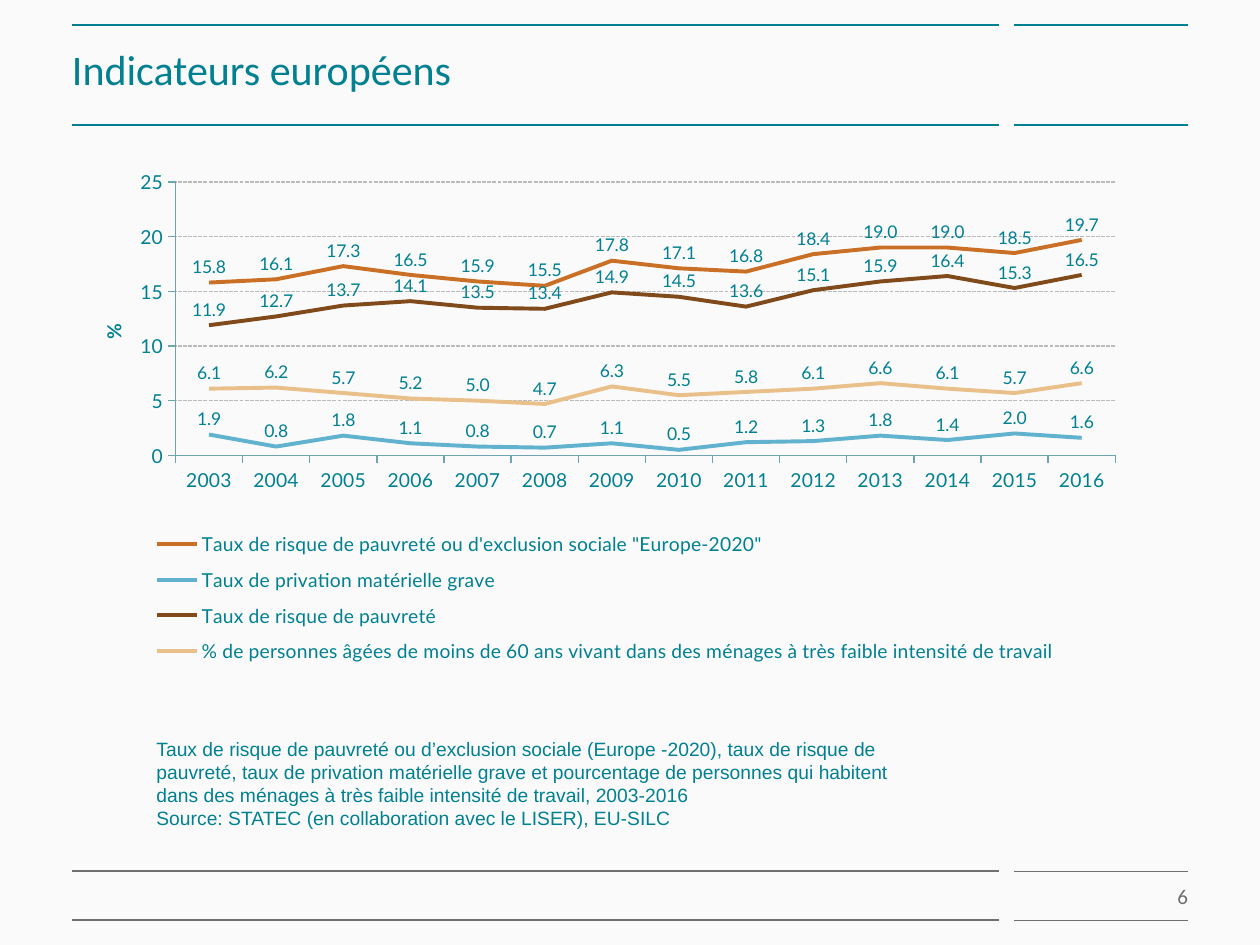
import dataclasses
import typing

import pptx
import pptx.chart.data
import pptx.dml.color
import pptx.enum.chart
import pptx.enum.dml
import pptx.enum.text
import pptx.oxml
import pptx.oxml.ns
import pptx.util

EMU_PER_PX = 914400 / 126


@dataclasses.dataclass(frozen=True)
class Theme:
    background: str = "FAFAFA"
    teal: str = "008091"
    grey: str = "6F6F6F"
    grid: str = "BBBBBB"
    axis: str = "6FA3AE"
    title_size: int = 24
    number_size: int = 12
    body_size: int = 11
    label_size: int = 10
    title_font: str = "Calibri"
    chart_font: str = "Lato"
    note_font: str = "Arial"


THEME = Theme()


class Box(typing.NamedTuple):
    left: int
    top: int
    width: int
    height: int


class Rule(typing.NamedTuple):
    top: int
    color: str
    wide_weight: float
    narrow_weight: float


class Series(typing.NamedTuple):
    name: str
    color: str
    values: tuple[float, ...]


class TextStyle(typing.NamedTuple):
    font: str
    size: int
    color: str


RULES = (
    Rule(25, THEME.teal, 1.5, 0.75),
    Rule(125, THEME.teal, 1.5, 0.75),
    Rule(871, THEME.grey, 0.75, 0.25),
    Rule(920, THEME.grey, 0.75, 0.25),
)
WIDE_SPAN = (999, 72)
NARROW_SPAN = (1188, 1014)

YEARS = [str(year) for year in range(2003, 2017)]
SERIES = (
    Series('Taux de risque de pauvreté ou d\'exclusion sociale "Europe-2020"', "CA7026",
           (15.8, 16.1, 17.3, 16.5, 15.9, 15.5, 17.8, 17.1, 16.8, 18.4, 19, 19, 18.5, 19.7)),
    Series("Taux de privation matérielle grave", "60B2CE",
           (1.9, 0.8, 1.8, 1.1, 0.8, 0.7, 1.1, 0.5, 1.2, 1.3, 1.8, 1.4, 2, 1.6)),
    Series("Taux de risque de pauvreté", "804A1A",
           (11.9, 12.7, 13.7, 14.1, 13.5, 13.4, 14.9, 14.5, 13.6, 15.1, 15.9, 16.4, 15.3, 16.5)),
    Series("% de personnes âgées de moins de 60 ans vivant dans des ménages "
           "à très faible intensité de travail", "EAC08A",
           (6.1, 6.2, 5.7, 5.2, 5, 4.7, 6.3, 5.5, 5.8, 6.1, 6.6, 6.1, 5.7, 6.6)),
)
NOTE = (
    "Taux de risque de pauvreté ou d’exclusion sociale (Europe -2020), taux de risque de "
    "pauvreté, taux de privation matérielle grave et pourcentage de personnes qui habitent "
    "dans des ménages à très faible intensité de travail, 2003-2016",
    "Source: STATEC (en collaboration avec le LISER), EU-SILC",
)


def px(length: int) -> pptx.util.Emu:
    return pptx.util.Emu(round(length * EMU_PER_PX))


def rgb(color: str) -> pptx.dml.color.RGBColor:
    return pptx.dml.color.RGBColor.from_string(color)


def set_all(target: typing.Any, values: dict[str, typing.Any]) -> None:
    for name, value in values.items():
        setattr(target, name, value)


def style_font(font, style: TextStyle) -> None:
    set_all(font, {"name": style.font, "size": pptx.util.Pt(style.size)})
    font.color.rgb = rgb(style.color)


def style_line(line, color: str, weight: float) -> None:
    line.color.rgb = rgb(color)
    line.width = pptx.util.Pt(weight)


def draw_line(slide, span: tuple[int, int], top: int, color: str, weight: float) -> None:
    start, end = span
    connector = slide.shapes.add_connector(
        pptx.enum.shapes.MSO_CONNECTOR.STRAIGHT, px(start), px(top), px(end), px(top))
    style_line(connector.line, color, weight)
    properties = connector._element.spPr
    properties.append(pptx.oxml.parse_xml(
        f'<a:effectLst {pptx.oxml.ns.nsdecls("a")}/>'))


def draw_text(slide, box: Box, texts: tuple[str, ...], style: TextStyle,
              frame_format: dict[str, typing.Any],
              alignment=pptx.enum.text.PP_ALIGN.LEFT) -> None:
    shape = slide.shapes.add_textbox(*map(px, box))
    frame = shape.text_frame
    set_all(frame, {"word_wrap": True, **frame_format})
    for index, text in enumerate(texts):
        paragraph = frame.paragraphs[0] if index == 0 else frame.add_paragraph()
        paragraph.alignment = alignment
        run = paragraph.add_run()
        run.text = text
        style_font(run.font, style)


def place(element, index: int, fractions: dict[str, float], inner: bool = False) -> None:
    """Give a chart part a manual layout, in fractions of the chart."""
    for old in element.findall(pptx.oxml.ns.qn("c:layout")):
        element.remove(old)
    target = '<c:layoutTarget val="inner"/>' if inner else ""
    modes = "".join(f'<c:{key}Mode val="edge"/>' for key in "xy")
    numbers = "".join(f'<c:{key} val="{value}"/>' for key, value in fractions.items())
    element.insert(index, pptx.oxml.parse_xml(
        f'<c:layout {pptx.oxml.ns.nsdecls("c")}><c:manualLayout>'
        f"{target}{modes}{numbers}</c:manualLayout></c:layout>"))


def draw_chart(slide, box: Box) -> None:
    enums = pptx.enum.chart
    data = pptx.chart.data.CategoryChartData(number_format="#,##0.0")
    data.categories = YEARS
    for item in SERIES:
        data.add_series(item.name, item.values)
    chart = slide.shapes.add_chart(enums.XL_CHART_TYPE.LINE, *map(px, box), data).chart
    body = TextStyle(THEME.chart_font, THEME.body_size, THEME.teal)
    set_all(chart, {"has_title": False, "has_legend": True})
    style_font(chart.font, body)

    # Axes
    for axis in (chart.category_axis, chart.value_axis):
        axis.major_tick_mark = enums.XL_TICK_MARK.OUTSIDE
        style_line(axis.format.line, THEME.axis, 0.75)
        style_font(axis.tick_labels.font, body)
    value_axis = chart.value_axis
    set_all(value_axis, {"minimum_scale": 0, "maximum_scale": 25, "major_unit": 5,
                         "has_major_gridlines": True, "has_title": True})
    set_all(value_axis.tick_labels, {"number_format": "#,##0",
                                     "number_format_is_linked": False})
    grid_line = value_axis.major_gridlines.format.line
    style_line(grid_line, THEME.grid, 0.75)
    grid_line.dash_style = pptx.enum.dml.MSO_LINE.SQUARE_DOT
    title_frame = value_axis.axis_title.text_frame
    title_frame.text = "%"
    title_font = title_frame.paragraphs[0].runs[0].font
    style_font(title_font, body)
    title_font.bold = True

    # Series and their labels
    plot = chart.plots[0]
    plot.vary_by_categories = False
    for series, item in zip(plot.series, SERIES):
        series.smooth = False
        style_line(series.format.line, item.color, 2.25)
        series.marker.style = enums.XL_MARKER_STYLE.NONE
        labels = series.data_labels
        set_all(labels, {"show_value": True, "number_format": "#,##0.0",
                         "number_format_is_linked": False,
                         "position": enums.XL_LABEL_POSITION.ABOVE})
        style_font(labels.font, body._replace(size=THEME.label_size))

    # Legend and placement
    legend = chart.legend
    set_all(legend, {"position": enums.XL_LEGEND_POSITION.BOTTOM,
                     "include_in_layout": False})
    style_font(legend.font, body)
    place(plot._element.getparent(), 0,
          {"x": 0.105, "y": 0.033, "w": 0.885, "h": 0.531}, inner=True)
    place(legend._element, 1, {"x": 0.07, "y": 0.69, "w": 0.88, "h": 0.3})
    place(value_axis.axis_title._element, 1, {"x": 0.03, "y": 0.3})


def main() -> None:
    presentation = pptx.Presentation()
    set_all(presentation, {"slide_width": px(1260), "slide_height": px(945)})
    slide = presentation.slides.add_slide(presentation.slide_layouts[6])
    background = slide.background.fill
    background.solid()
    background.fore_color.rgb = rgb(THEME.background)

    # Header and footer rules
    for rule in RULES:
        draw_line(slide, WIDE_SPAN, rule.top, rule.color, rule.wide_weight)
        draw_line(slide, NARROW_SPAN, rule.top, rule.color, rule.narrow_weight)

    # Title and page number
    no_margins = dict.fromkeys(
        ("margin_left", "margin_top", "margin_right", "margin_bottom"), 0)
    inset = pptx.util.Inches(0.1)
    draw_text(slide, Box(72, 25, 927, 100), ("Indicateurs européens",),
              TextStyle(THEME.title_font, THEME.title_size, THEME.teal),
              {**no_margins, "margin_bottom": inset,
               "vertical_anchor": pptx.enum.text.MSO_ANCHOR.MIDDLE})
    draw_text(slide, Box(1014, 871, 174, 49), ("6",),
              TextStyle(THEME.title_font, THEME.number_size, THEME.grey),
              {**no_margins, "margin_top": inset}, pptx.enum.text.PP_ALIGN.RIGHT)

    # Chart and source note
    draw_chart(slide, Box(64, 165, 1062, 515))
    draw_text(slide, Box(144, 731, 764, 130), NOTE,
              TextStyle(THEME.note_font, THEME.body_size, THEME.teal),
              {"auto_size": pptx.enum.text.MSO_AUTO_SIZE.SHAPE_TO_FIT_TEXT})

    presentation.save("out.pptx")


if __name__ == "__main__":
    main()
